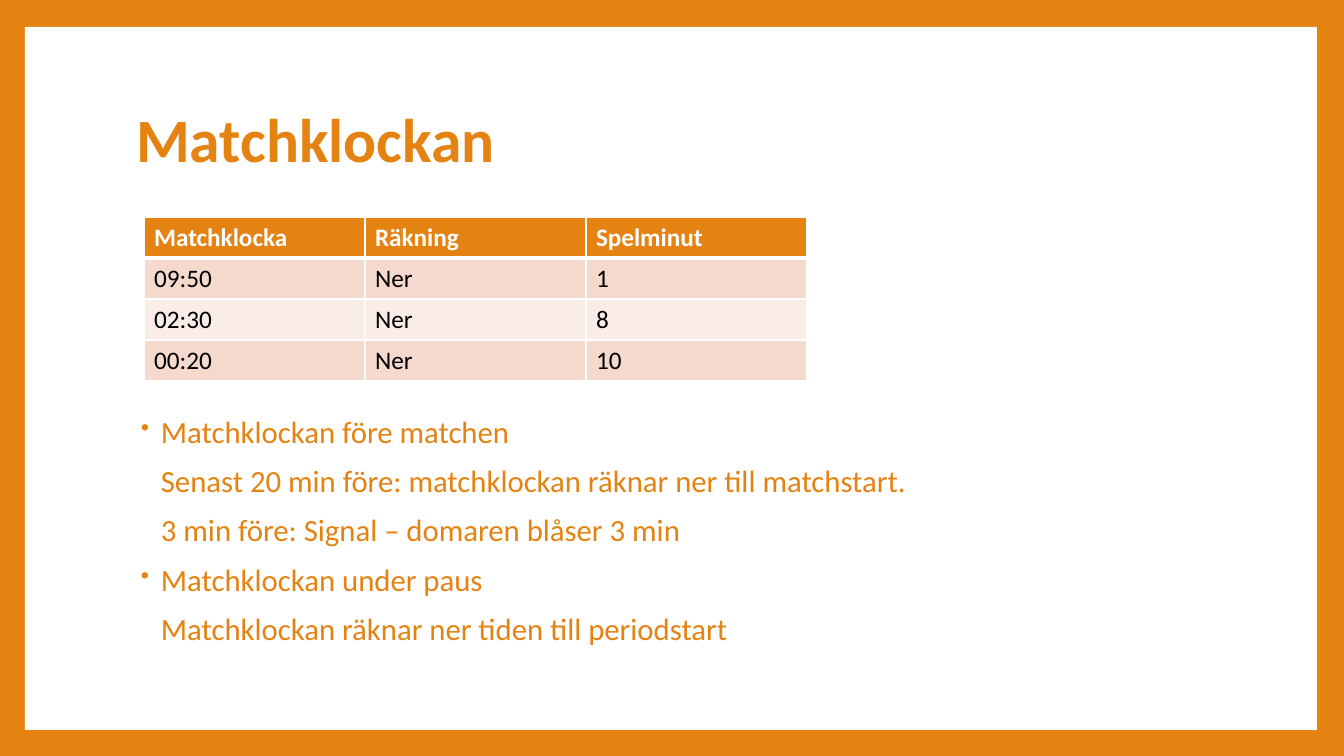
"""Builds the match clock slide: a title, a table of clock readings and timing notes."""
from lxml import etree
from pptx import Presentation
from pptx import util as u
from pptx.dml.color import RGBColor
from pptx.enum import shapes, text
from pptx.oxml import ns

ORANGE = RGBColor(0xE4, 0x83, 0x12)
WHITE = RGBColor(0xFF, 0xFF, 0xFF)
BLACK = RGBColor(0, 0, 0)
BAND_DARK = RGBColor(0xF5, 0xD9, 0xCC)
BAND_LIGHT = RGBColor(0xFA, 0xED, 0xE7)

READINGS = [
    ("Matchklocka", "Räkning", "Spelminut"),
    ("09:50", "Ner", "1"),
    ("02:30", "Ner", "8"),
    ("00:20", "Ner", "10"),
]
NOTES = [
    (True, "Matchklockan före matchen"),
    (False, "Senast 20 min före: matchklockan räknar ner till matchstart."),
    (False, "3 min före: Signal – domaren blåser 3 min"),
    (True, "Matchklockan under paus"),
    (False, "Matchklockan räknar ner tiden till periodstart"),
]


def px(n):
    return u.Inches(n / 100.8)


def sub(parent, tag, **attrs):
    el = etree.SubElement(parent, ns.qn(tag))
    for name, value in attrs.items():
        el.set(name, str(value))
    return el


def write(p, words, size=18, color=BLACK, bold=False, line=None, before=None):
    p.alignment = text.PP_ALIGN.LEFT
    if line:
        p.line_spacing = line
    if before is not None:
        p.space_before = u.Pt(before)
    r = p.add_run()
    r.text = words
    r.font.name = "Calibri"
    r.font.size = u.Pt(size)
    r.font.bold = bold
    r.font.color.rgb = color


class Deck:
    def __init__(self, width, height):
        self.prs = Presentation()
        self.prs.slide_width, self.prs.slide_height = px(width), px(height)
        self.s = self.prs.slides.add_slide(self.prs.slide_layouts[5])

    def background(self, color):
        self.s.background.fill.solid()
        self.s.background.fill.fore_color.rgb = color

    def panel(self, x, y, w, h, color):
        sp = self.s.shapes.add_shape(shapes.MSO_SHAPE.RECTANGLE, px(x), px(y), px(w), px(h))
        sp.shadow.inherit = False
        sp.fill.solid()
        sp.fill.fore_color.rgb = color
        sp.line.fill.background()
        sp.element.getparent().insert(2, sp.element)

    def title(self, x, y, w, h, words):
        sp = self.s.shapes.title
        sp.left, sp.top, sp.width, sp.height = px(x), px(y), px(w), px(h)
        tf = sp.text_frame
        tf.auto_size = text.MSO_AUTO_SIZE.NONE
        tf.vertical_anchor = text.MSO_ANCHOR.MIDDLE
        write(tf.paragraphs[0], words, size=44, color=ORANGE, bold=True, line=0.9)

    def table(self, x, y, col_w, row_h, rows):
        n_cols = len(rows[0])
        frame = self.s.shapes.add_table(
            len(rows), n_cols, px(x), px(y), px(col_w * n_cols), px(row_h * len(rows)))
        for col in frame.table.columns:
            col.width = px(col_w)
        for i, row in enumerate(rows):
            frame.table.rows[i].height = px(row_h)
            head = i == 0
            fill = ORANGE if head else BAND_DARK if i % 2 else BAND_LIGHT
            for j, words in enumerate(row):
                cell = frame.table.cell(i, j)
                self.borders(cell, top=3 if i == 1 else 1, bottom=3 if head else 1)
                cell.fill.solid()
                cell.fill.fore_color.rgb = fill
                write(cell.text_frame.paragraphs[0], words,
                      color=WHITE if head else BLACK, bold=head)

    def borders(self, cell, top, bottom):
        props = cell._tc.get_or_add_tcPr()
        for side, width in (("L", 1), ("R", 1), ("T", top), ("B", bottom)):
            ln = sub(props, "a:ln" + side, w=u.Pt(width))
            sub(sub(ln, "a:solidFill"), "a:srgbClr", val=WHITE)

    def notes(self, x, y, w, h, items):
        tf = self.s.shapes.add_textbox(px(x), px(y), px(w), px(h)).text_frame
        tf.word_wrap = True
        for i, (bulleted, words) in enumerate(items):
            p = tf.add_paragraph() if i else tf.paragraphs[0]
            props = p._p.get_or_add_pPr()
            props.set("marL", str(px(25)))
            props.set("indent", str(px(-20 if bulleted else 0)))
            if bulleted:
                sub(sub(props, "a:buClr"), "a:srgbClr", val=ORANGE)
                sub(props, "a:buSzPct", val=80000)
                sub(props, "a:buChar", char="•")
            write(p, words, size=22, color=ORANGE, line=0.8, before=14 if i else 0)


def main():
    deck = Deck(1344, 756)
    deck.background(ORANGE)
    deck.panel(25, 27, 1292, 703, WHITE)
    deck.title(126, 68, 1089, 149, "Matchklockan")
    deck.table(144, 217, 221, 41, READINGS)
    deck.notes(126, 415, 1089, 247, NOTES)
    deck.prs.save("out.pptx")


if __name__ == "__main__":
    main()
